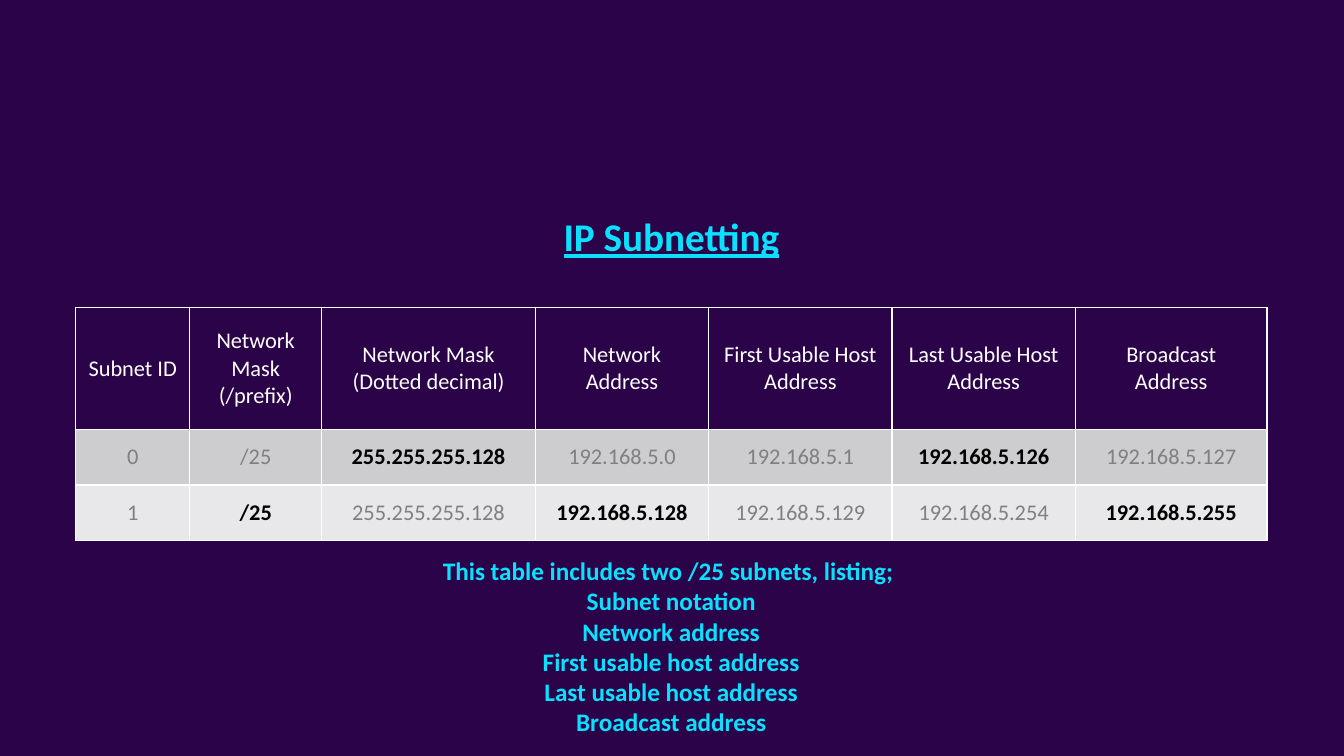
from lxml.etree import SubElement
from pptx import Presentation
from pptx.dml.color import RGBColor
from pptx.enum.text import MSO_ANCHOR, MSO_AUTO_SIZE, PP_ALIGN
from pptx.oxml.ns import qn
from pptx.util import Cm, Pt

PURPLE = RGBColor(0x2B, 0x03, 0x48)
CYAN = RGBColor(0x0B, 0xE1, 0xFF)
WHITE = RGBColor(0xFF, 0xFF, 0xFF)
BLACK = RGBColor(0x00, 0x00, 0x00)
GREY = RGBColor(0x80, 0x80, 0x80)
BAND_DARK = RGBColor(0xCD, 0xCC, 0xCF)
BAND_LIGHT = RGBColor(0xE8, 0xE7, 0xE9)

COLUMN_WIDTHS = [2.87, 3.33, 5.38, 4.37, 4.62, 4.62, 4.83]
ROW_HEIGHTS = [3.07, 1.4, 1.4]
HEADINGS = [
    "Subnet ID", "Network Mask\n(/prefix)", "Network Mask\n(Dotted decimal)",
    "Network Address", "First Usable Host Address",
    "Last Usable Host Address", "Broadcast\nAddress",
]
SUBNETS = [
    ["0", "/25", "255.255.255.128", "192.168.5.0",
     "192.168.5.1", "192.168.5.126", "192.168.5.127"],
    ["1", "/25", "255.255.255.128", "192.168.5.128",
     "192.168.5.129", "192.168.5.254", "192.168.5.255"],
]
ROW_FILLS = [PURPLE, BAND_DARK, BAND_LIGHT]
ANSWERS = {(1, 2), (1, 5), (2, 1), (2, 3), (2, 6)}
SUMMARY = [
    "This table includes two /25 subnets, listing; ", "Subnet notation",
    "Network address", "First usable host address",
    "Last usable host address", "Broadcast address",
]


def write_centred(frame, text, size, color, bold, underline=False):
    frame.text = text
    frame.word_wrap = True
    for paragraph in frame.paragraphs:
        paragraph.alignment = PP_ALIGN.CENTER
        font = paragraph.font
        font.name = "Calibri"
        font.size = Pt(size)
        font.color.rgb = color
        font.bold = bold
        font.underline = underline


def add_borders(cell, color, width):
    properties = cell._tc.get_or_add_tcPr()
    for side in ("a:lnL", "a:lnR", "a:lnT", "a:lnB"):
        border = SubElement(properties, qn(side), w=str(Pt(width)))
        SubElement(SubElement(border, qn("a:solidFill")), qn("a:srgbClr"), val=str(color))


def place_title(slide, left, top, width, height):
    title = slide.shapes.title
    title.left, title.top, title.width, title.height = left, top, width, height
    title.text_frame.auto_size = MSO_AUTO_SIZE.NONE
    title.text_frame.vertical_anchor = MSO_ANCHOR.TOP
    write_centred(title.text_frame, "IP Subnetting", 28, CYAN, True, True)


def add_subnet_table(slide, left, top):
    rows = [HEADINGS, *SUBNETS]
    subnets = slide.shapes.add_table(
        len(rows), len(HEADINGS), left, top,
        Cm(sum(COLUMN_WIDTHS)), Cm(sum(ROW_HEIGHTS))).table
    for column, width in zip(subnets.columns, COLUMN_WIDTHS):
        column.width = Cm(width)
    for row, height in zip(subnets.rows, ROW_HEIGHTS):
        row.height = Cm(height)
    for r, texts in enumerate(rows):
        for c, text in enumerate(texts):
            cell = subnets.cell(r, c)
            is_answer = (r, c) in ANSWERS
            color = WHITE if r == 0 else BLACK if is_answer else GREY
            write_centred(cell.text_frame, text, 16, color, is_answer)
            cell.vertical_anchor = MSO_ANCHOR.MIDDLE
            add_borders(cell, WHITE, 1)
            cell.fill.solid()
            cell.fill.fore_color.rgb = ROW_FILLS[r]


def add_summary(slide, left, top, width, height):
    summary = slide.shapes.add_textbox(left, top, width, height)
    write_centred(summary.text_frame, "\n".join(SUMMARY), 18, CYAN, True)


def build_subnetting_slide(presentation):
    slide = presentation.slides.add_slide(presentation.slide_layouts[5])
    slide.background.fill.solid()
    slide.background.fill.fore_color.rgb = PURPLE
    place_title(slide, Cm(8.46), Cm(5.23), Cm(16.92), Cm(1.45))
    add_subnet_table(slide, Cm(1.91), Cm(7.75))
    add_summary(slide, Cm(5.28), Cm(13.87), Cm(23.27), Cm(4.88))


def main():
    presentation = Presentation()
    presentation.slide_width = Cm(33.87)
    presentation.slide_height = Cm(19.05)
    build_subnetting_slide(presentation)
    presentation.save("out.pptx")


if __name__ == "__main__":
    main()
